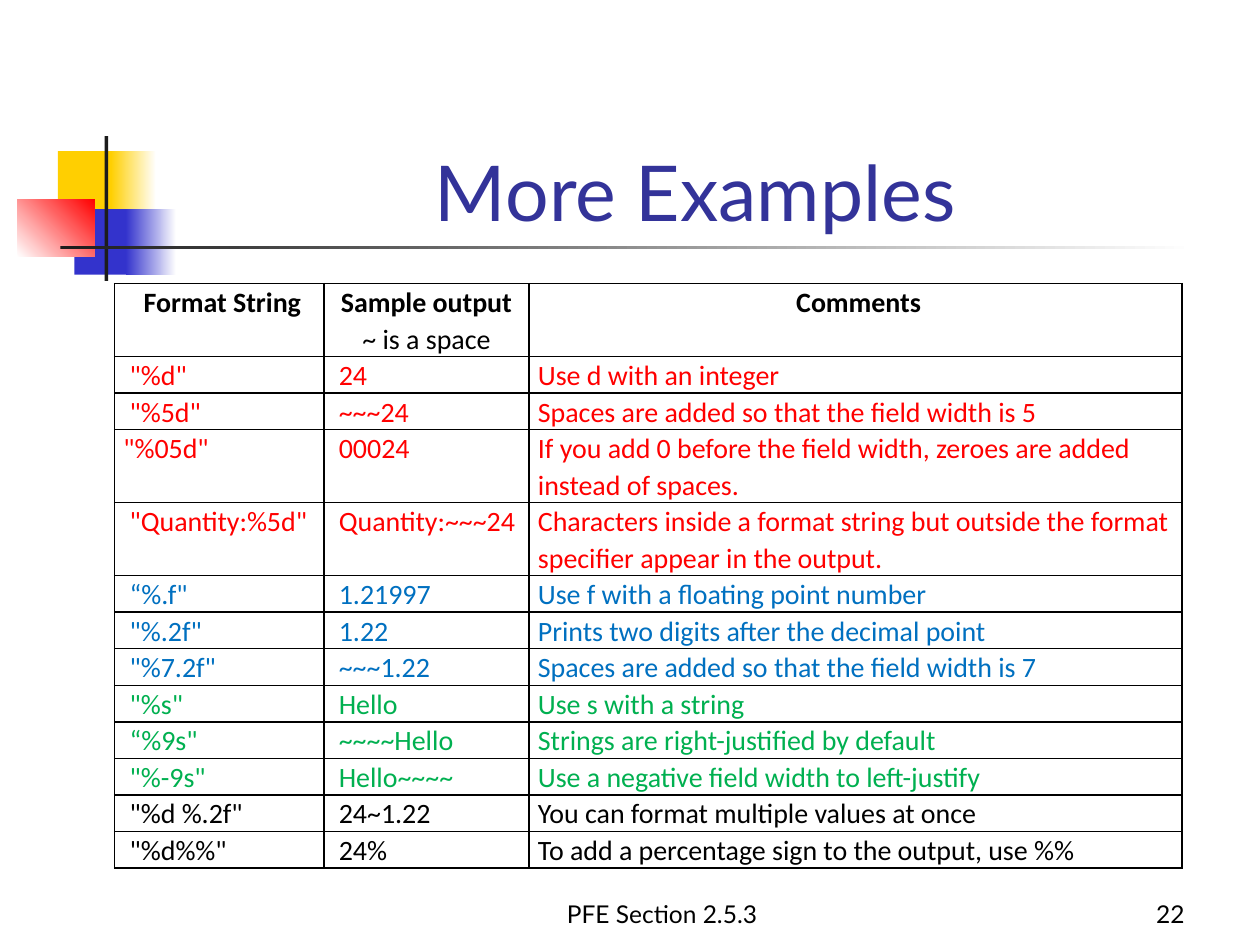
"""Build the slide of format string examples."""
import pptx
import pptx.util
import pptx.dml.color
import pptx.enum.shapes
import pptx.enum.text
import pptx.oxml
import pptx.oxml.ns

Inches = pptx.util.Inches
RGBColor = pptx.dml.color.RGBColor
ALIGN = pptx.enum.text.PP_ALIGN
ANCHOR = pptx.enum.text.MSO_ANCHOR

BLACK = RGBColor(0x00, 0x00, 0x00)
WHITE = RGBColor(0xFF, 0xFF, 0xFF)
CHARCOAL = RGBColor(0x1C, 0x1C, 0x1C)
YELLOW = RGBColor(0xFF, 0xCF, 0x01)
INDIGO = RGBColor(0x33, 0x33, 0xCC)
NAVY = RGBColor(0x33, 0x33, 0x99)
RED = RGBColor(0xFF, 0x00, 0x00)
BLUE = RGBColor(0x00, 0x70, 0xC0)
GREEN = RGBColor(0x00, 0xB0, 0x50)


def write(frame, text, font="Lato", size=14, color=BLACK, bold=False,
          align=ALIGN.LEFT, spacing=None):
    frame.word_wrap = True
    for index, line in enumerate(text.split("\n")):
        paragraph = frame.paragraphs[0] if index == 0 else frame.add_paragraph()
        paragraph.alignment = align
        paragraph.line_spacing = spacing
        run = paragraph.add_run()
        run.text = line
        run.font.name = font
        run.font.size = pptx.util.Pt(size)
        run.font.color.rgb = color
        run.font.bold = bold and index == 0


deck = pptx.Presentation()
deck.slide_width, deck.slide_height = Inches(10), Inches(7.5)
slide = deck.slides.add_slide(deck.slide_layouts[6])

ornament = [
    (0.46, 1.2, 0.48, 0.52, [YELLOW], 0),
    (0.88, 1.2, 0.36, 0.52, [YELLOW, WHITE], 0),
    (0.59, 1.66, 0.46, 0.52, [INDIGO], 0),
    (1, 1.66, 0.4, 0.52, [INDIGO, WHITE], 0),
    (0.14, 1.58, 0.61, 0.46, [WHITE, RED], 45),
    (0.83, 1.08, 0.03, 1.15, [CHARCOAL], 0),
    (0.48, 1.95, 9, 0.03, [CHARCOAL, WHITE], 0),
]
for left, top, width, height, colors, angle in ornament:
    block = slide.shapes.add_shape(
        pptx.enum.shapes.MSO_SHAPE.RECTANGLE,
        Inches(left), Inches(top), Inches(width), Inches(height))
    block.shadow.inherit = False
    block.line.fill.background()
    if len(colors) == 1:
        block.fill.solid()
        block.fill.fore_color.rgb = colors[0]
    else:
        block.fill.gradient()
        block.fill.gradient_angle = angle
        for stop, color in zip(block.fill.gradient_stops, colors):
            stop.color.rgb = color

captions = [
    (1.26, 0.68, 8.52, 1.25, "More Examples", 44, NAVY, ALIGN.CENTER),
    (3.67, 6.92, 3.17, 0.5, "PFE Section 2.5.3", 14, BLACK, ALIGN.CENTER),
    (7.42, 6.92, 2.08, 0.5, "22", 14, BLACK, ALIGN.RIGHT),
]
for left, top, width, height, text, size, color, align in captions:
    caption = slide.shapes.add_textbox(
        Inches(left), Inches(top), Inches(width), Inches(height)).text_frame
    caption.vertical_anchor = ANCHOR.BOTTOM
    write(caption, text, size=size, color=color, align=align)

examples = [
    (BLACK, 2, "Format String", "Sample output\n~ is a space", "Comments"),
    (RED, 1, '"%d"', "24", "Use d with an integer"),
    (RED, 1, '"%5d"', "~~~24", "Spaces are added so that the field width is 5"),
    (RED, 2, '"%05d"', "00024",
     "If you add 0 before the field width, zeroes are added instead of spaces."),
    (RED, 2, '"Quantity:%5d"', "Quantity:~~~24",
     "Characters inside a format string but outside the format specifier "
     "appear in the output."),
    (BLUE, 1, '“%.f"', "1.21997", "Use f with a floating point number"),
    (BLUE, 1, '"%.2f"', "1.22", "Prints two digits after the decimal point"),
    (BLUE, 1, '"%7.2f"', "~~~1.22", "Spaces are added so that the field width is 7"),
    (GREEN, 1, '"%s"', "Hello", "Use s with a string"),
    (GREEN, 1, '“%9s"', "~~~~Hello", "Strings are right-justified by default"),
    (GREEN, 1, '"%-9s"', "Hello~~~~", "Use a negative field width to left-justify"),
    (BLACK, 1, '"%d %.2f"', "24~1.22", "You can format multiple values at once"),
    (BLACK, 1, '"%d%%"', "24%", "To add a percentage sign to the output, use %%"),
]
line_height = Inches(0.29)
format_table = slide.shapes.add_table(
    len(examples), 3, Inches(0.91), Inches(2.25), Inches(8.47),
    line_height * sum(example[1] for example in examples)).table
format_table.first_row = False
format_table.horz_banding = False
for column, width in zip(format_table.columns, (1.66, 1.63, 5.18)):
    column.width = Inches(width)

for row, (color, lines, *texts) in enumerate(examples):
    format_table.rows[row].height = line_height * lines
    header = row == 0
    for col, text in enumerate(texts):
        cell = format_table.cell(row, col)
        indented = col != 1 if header else col < 2 and text != '"%05d"'
        cell.margin_left = Inches(0.12 if indented else 0.07)
        cell.margin_right = Inches(0.07)
        cell.margin_top = cell.margin_bottom = 0
        write(cell.text_frame, text, font="Calibri", size=16, color=color,
              bold=header, align=ALIGN.CENTER if header else ALIGN.LEFT,
              spacing=1.07)
        properties = cell._tc.get_or_add_tcPr()
        for side in ("lnL", "lnR", "lnT", "lnB"):
            properties.append(pptx.oxml.parse_xml(
                f'<a:{side} {pptx.oxml.ns.nsdecls("a")} w="12700"><a:solidFill>'
                f'<a:srgbClr val="{BLACK}"/></a:solidFill></a:{side}>'))
        cell.fill.background()

deck.save("out.pptx")
